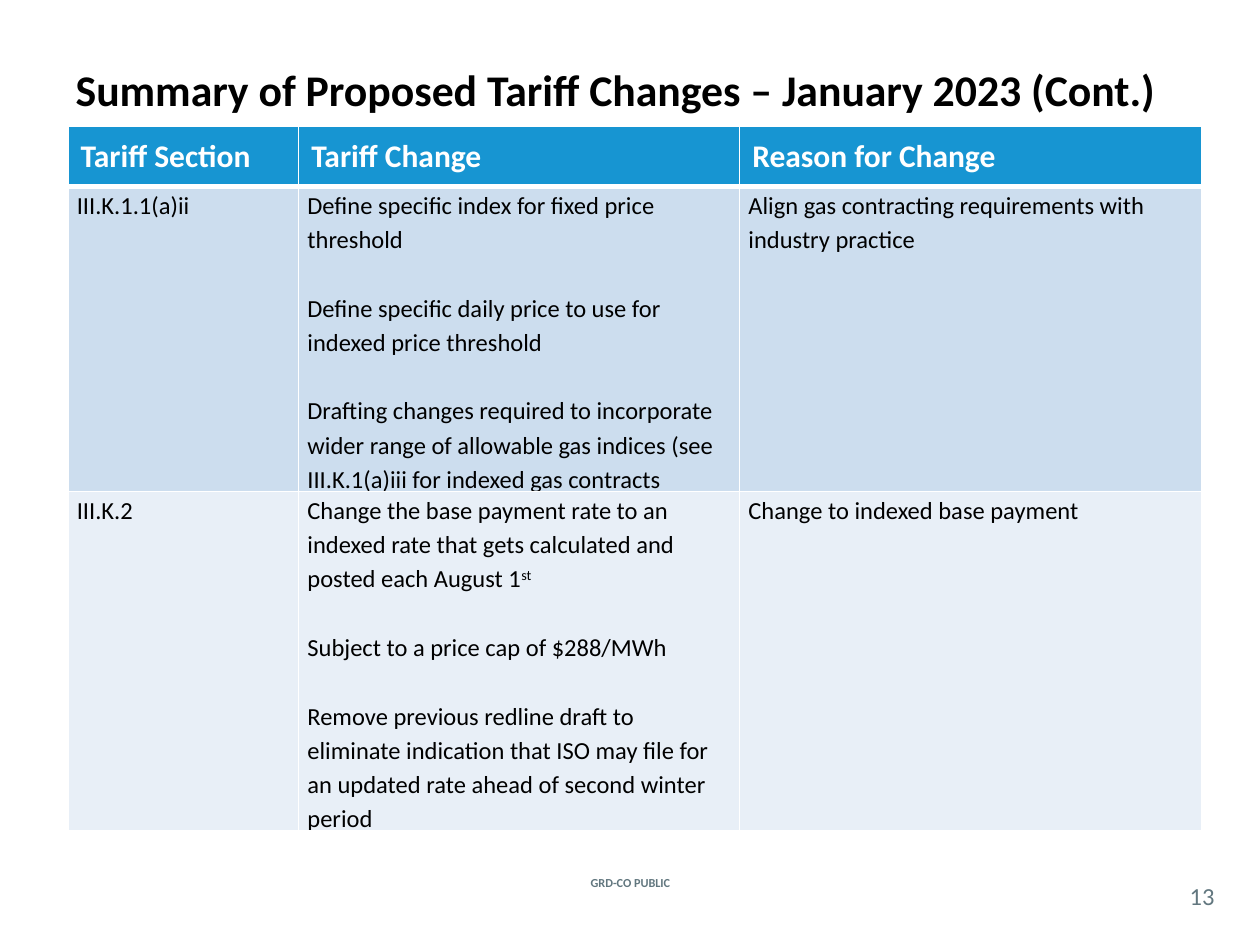
"""Build the slide that summarises proposed tariff changes in a table."""
from dataclasses import dataclass

from pptx import Presentation
from pptx.dml.color import RGBColor
from pptx.enum.text import MSO_ANCHOR as Anchor, MSO_AUTO_SIZE as AutoSize, PP_ALIGN as Align
from pptx.oxml import parse_xml
from pptx.oxml.ns import nsdecls
from pptx.util import Pt


@dataclass(frozen=True)
class Theme:
    font: str = "Calibri"
    black: str = "000000"
    white: str = "FFFFFF"
    grey: str = "62777F"
    header: str = "1795D2"
    bands: tuple = ("CCDDEE", "E8EFF7")
    title_size: float = 25
    header_size: float = 18
    body_size: float = 14
    footer_size: float = 7
    line_spacing: float = 1.15
    blank_line: float = 19.6


THEME = Theme()
TITLE = "Summary of Proposed Tariff Changes – January 2023 (Cont.)"
FOOTER = "GRD-CO PUBLIC"
PAGE_NUMBER = "13"
HEADERS = ["Tariff Section", "Tariff Change", "Reason for Change"]
ROWS = [
    [
        ["III.K.1.1(a)ii"],
        [
            "Define specific index for fixed price threshold",
            "Define specific daily price to use for indexed price threshold",
            "Drafting changes required to incorporate wider range of allowable "
            "gas indices (see III.K.1(a)iii for indexed gas contracts",
        ],
        ["Align gas contracting requirements with industry practice"],
    ],
    [
        ["III.K.2"],
        [
            ("Change the base payment rate to an indexed rate that gets "
             "calculated and posted each August 1", "st"),
            "Subject to a price cap of $288/MWh",
            "Remove previous redline draft to eliminate indication that ISO may "
            "file for an updated rate ahead of second winter period",
        ],
        ["Change to indexed base payment"],
    ],
]
TITLE_BOX = (36, 5.8, 648, 90)
FOOTER_BOX = (307.4, 498.2, 105.8, 12.2)
NUMBER_BOX = (671.8, 501.1, 30.2, 20.9)
TABLE_BOX = (38.9, 72, 648, 390.2)
COLUMN_WIDTHS = (131.8, 252, 264.2)
ROW_HEIGHTS = (34.6, 168.5, 187.2)
HEADER_INSETS = (7.2, 3.6, 7.2, 3.6)
BODY_INSETS = (5, 0, 5, 0)


def write(frame, paragraphs, *, size, color, bold=False, align=Align.LEFT,
          line_spacing=None, gap=0):
    """Fill a text frame; the second part of a tuple is superscript."""
    frame.word_wrap = True
    for index, parts in enumerate(paragraphs):
        paragraph = frame.add_paragraph() if index else frame.paragraphs[0]
        paragraph.alignment = align
        if line_spacing:
            paragraph.line_spacing = line_spacing
        if index:
            paragraph.space_before = Pt(gap)
        for position, text in enumerate((parts,) if isinstance(parts, str) else parts):
            run = paragraph.add_run()
            run.text = text
            font = run.font
            font.name, font.size, font.bold = THEME.font, Pt(size), bold
            font.color.rgb = RGBColor.from_string(color)
            if position:
                run._r.get_or_add_rPr().set("baseline", "30000")


def style_cell(cell, fill, insets, bottom=1, top=1):
    """Set the fill, margins and white borders of a cell."""
    properties = cell._tc.get_or_add_tcPr()
    for side, width in (("L", 1), ("R", 1), ("T", top), ("B", bottom)):
        properties.append(parse_xml(
            f'<a:ln{side} {nsdecls("a")} w="{Pt(width)}"><a:solidFill>'
            f'<a:srgbClr val="{THEME.white}"/></a:solidFill></a:ln{side}>'))
    cell.fill.solid()
    cell.fill.fore_color.rgb = RGBColor.from_string(fill)
    (cell.margin_left, cell.margin_top,
     cell.margin_right, cell.margin_bottom) = map(Pt, insets)


def add_title(slide):
    """Place and format the title placeholder."""
    title = slide.shapes.title
    title.left, title.top, title.width, title.height = map(Pt, TITLE_BOX)
    frame = title.text_frame
    frame.auto_size, frame.vertical_anchor = AutoSize.NONE, Anchor.MIDDLE
    write(frame, [TITLE], size=THEME.title_size, color=THEME.black, bold=True)


def add_label(slide, box, text, size, bold=False, inset=None):
    """Add a centred grey label."""
    frame = slide.shapes.add_textbox(*map(Pt, box)).text_frame
    frame.vertical_anchor = Anchor.MIDDLE
    if inset is not None:
        frame.margin_left = frame.margin_right = Pt(inset)
        frame.margin_top = frame.margin_bottom = Pt(inset)
    write(frame, [text], size=size, color=THEME.grey, bold=bold, align=Align.CENTER)


def add_changes_table(slide):
    """Add the table of tariff changes."""
    table = slide.shapes.add_table(
        len(ROWS) + 1, len(HEADERS), *map(Pt, TABLE_BOX)).table
    for column, width in zip(table.columns, COLUMN_WIDTHS):
        column.width = Pt(width)
    for row, height in zip(table.rows, ROW_HEIGHTS):
        row.height = Pt(height)
    for column, text in enumerate(HEADERS):
        cell = table.cell(0, column)
        style_cell(cell, THEME.header, HEADER_INSETS, bottom=3)
        cell.vertical_anchor = Anchor.MIDDLE
        write(cell.text_frame, [text], size=THEME.header_size,
              color=THEME.white, bold=True)
    for row, (contents, fill) in enumerate(zip(ROWS, THEME.bands), 1):
        for column, paragraphs in enumerate(contents):
            cell = table.cell(row, column)
            style_cell(cell, fill, BODY_INSETS, top=3 if row == 1 else 1)
            write(cell.text_frame, paragraphs, size=THEME.body_size,
                  color=THEME.black, line_spacing=THEME.line_spacing,
                  gap=THEME.blank_line)


def main():
    """Build and save the presentation."""
    presentation = Presentation()
    presentation.slide_width, presentation.slide_height = Pt(720), Pt(540)
    slide = presentation.slides.add_slide(presentation.slide_layouts[5])
    add_label(slide, FOOTER_BOX, FOOTER, THEME.footer_size, bold=True)
    add_label(slide, NUMBER_BOX, PAGE_NUMBER, THEME.body_size, inset=0)
    add_changes_table(slide)
    add_title(slide)
    presentation.save("out.pptx")


if __name__ == "__main__":
    main()
